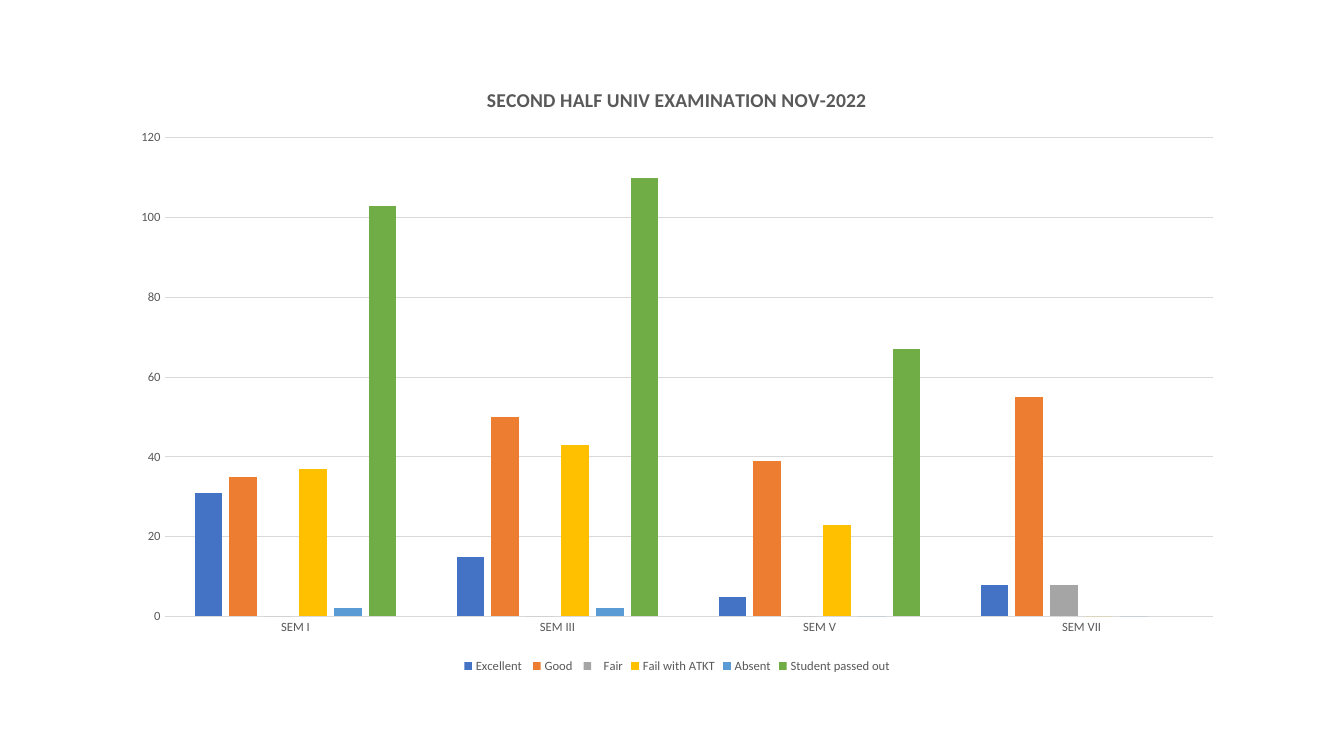
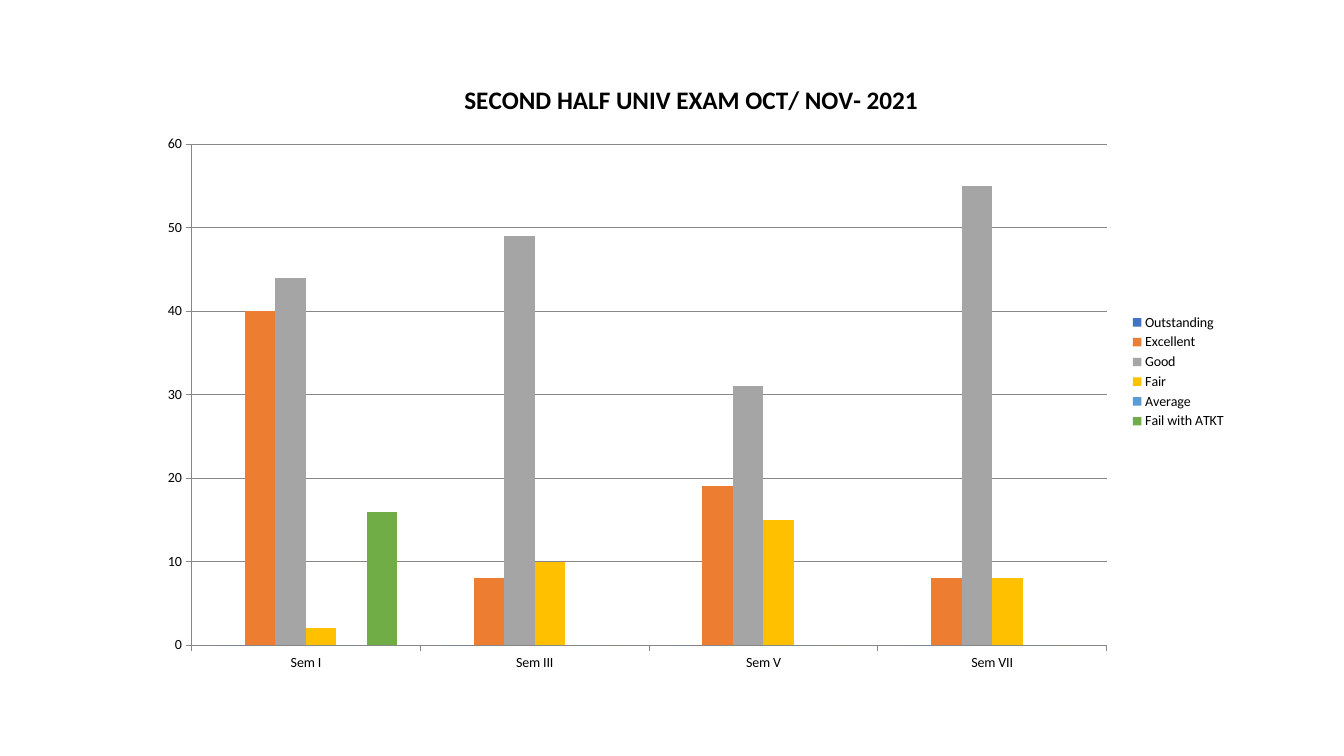
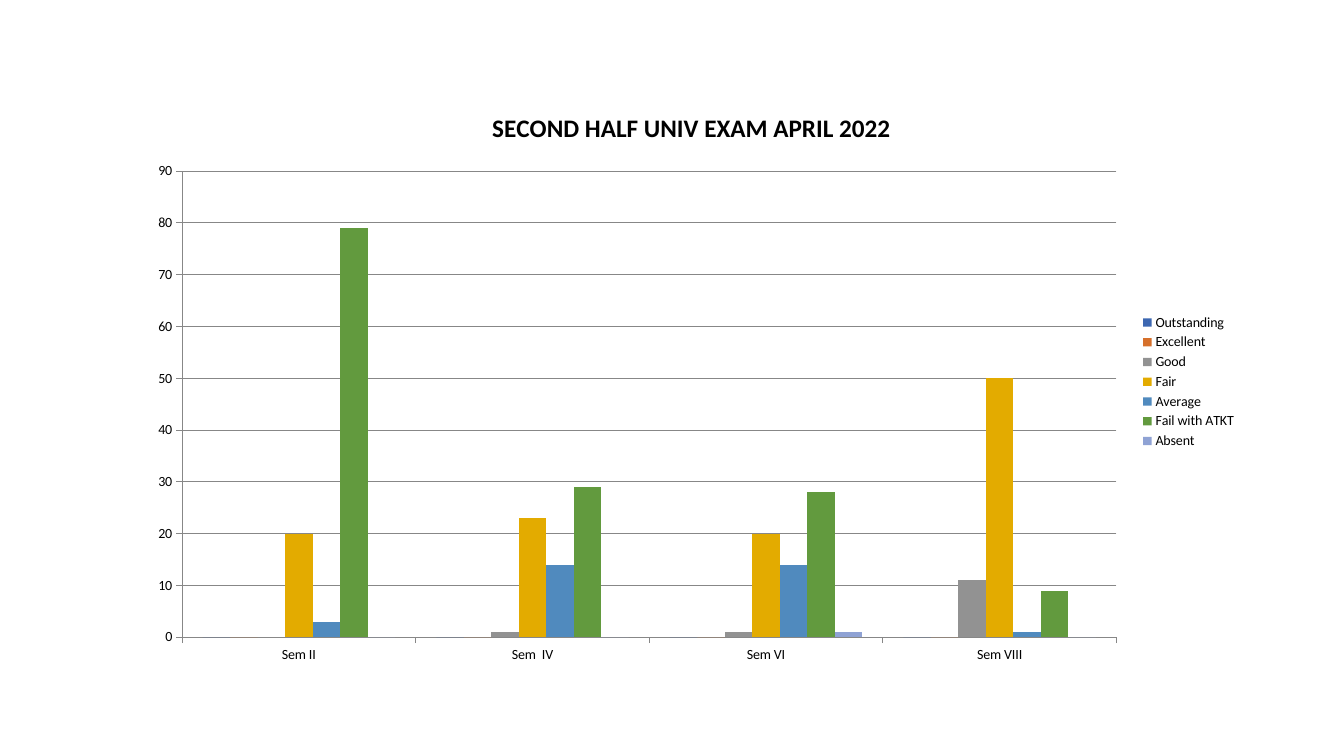
from dataclasses import dataclass
from typing import Optional

from pptx import Presentation
from pptx.chart.axis import CategoryAxis, ValueAxis
from pptx.chart.chart import Chart
from pptx.chart.data import CategoryChartData
from pptx.dml.color import RGBColor
from pptx.enum.chart import XL_CHART_TYPE, XL_LEGEND_POSITION, XL_TICK_MARK
from pptx.util import Cm, Pt

COLUMN = XL_CHART_TYPE.COLUMN_CLUSTERED
BOTTOM = XL_LEGEND_POSITION.BOTTOM
RIGHT = XL_LEGEND_POSITION.RIGHT
NO_TICK = XL_TICK_MARK.NONE
OUT_TICK = XL_TICK_MARK.OUTSIDE

FONT = "Calibri"
COLORS = {
    "blue": "4472C4",
    "orange": "ED7D31",
    "gray": "A5A5A5",
    "gold": "FFC000",
    "sky": "5B9BD5",
    "green": "70AD47",
    "deep blue": "3D67B1",
    "deep orange": "D6702B",
    "deep gray": "929292",
    "deep gold": "E3AB00",
    "deep sky": "508ABE",
    "deep green": "629A3E",
    "pale blue": "8FA2D4",
    "black": "000000",
    "slate": "595959",
    "silver": "D9D9D9",
    "steel": "878787",
}
BRIGHT = ("blue", "orange", "gray", "gold", "sky", "green")
DEEP = tuple(f"deep {name}" for name in BRIGHT) + ("pale blue",)


@dataclass(frozen=True)
class Look:
    ink: str
    grid: str
    title: int
    text: int
    tick: XL_TICK_MARK
    legend: XL_LEGEND_POSITION
    gap: int
    overlap: int
    spine: bool


@dataclass(frozen=True)
class Series:
    name: str
    values: tuple[Optional[int], ...]


@dataclass(frozen=True)
class Exam:
    title: str
    box: tuple[float, float, float, float]
    look: Look
    hues: tuple[str, ...]
    top: int
    step: int
    terms: tuple[str, ...]
    series: tuple[Series, ...]


SOFT = Look("slate", "silver", 14, 9, NO_TICK, BOTTOM, 219, -27, False)
PLAIN = Look("black", "steel", 18, 10, OUT_TICK, RIGHT, 150, 0, True)

EXAMS = (
    Exam(
        "SECOND HALF UNIV EXAMINATION NOV-2022",
        (3, 1.63, 28.12, 15.44),
        SOFT, BRIGHT, 120, 20,
        ("SEM I", "SEM III", "SEM V", "SEM VII"),
        (
            Series("Excellent ", (31, 15, 5, 8)),
            Series("Good ", (35, 50, 39, 55)),
            Series("   Fair", (0, 0, 0, 8)),
            Series("Fail with ATKT", (37, 43, 23, 0)),
            Series("Absent", (2, 2, 0, 0)),
            Series("Student passed out", (103, 110, 67, None)),
        ),
    ),
    Exam(
        "SECOND HALF UNIV EXAM OCT/ NOV- 2021",
        (3.68, 1.52, 27.48, 15.7),
        PLAIN, BRIGHT, 60, 10,
        ("Sem I", "Sem III", "Sem V", "Sem VII"),
        (
            Series("Outstanding", (0, 0, 0, 0)),
            Series("Excellent", (40, 8, 19, 8)),
            Series("Good", (44, 49, 31, 55)),
            Series("Fair", (2, 10, 15, 8)),
            Series("Average", (0, 0, 0, 0)),
            Series("Fail with ATKT", (16, 0, 0, 0)),
        ),
    ),
    Exam(
        "SECOND HALF UNIV EXAM APRIL 2022",
        (3.43, 2.24, 27.99, 14.76),
        PLAIN, DEEP, 90, 10,
        ("Sem II", "Sem  IV", "Sem VI", "Sem VIII"),
        (
            Series("Outstanding", (0, 0, 0, 0)),
            Series("Excellent", (0, 0, 0, 0)),
            Series("Good ", (0, 1, 1, 11)),
            Series("Fair", (20, 23, 20, 50)),
            Series("Average", (3, 14, 14, 1)),
            Series("Fail with ATKT", (79, 29, 28, 9)),
            Series("Absent", (0, 0, 1, 0)),
        ),
    ),
)


def color(name: str) -> RGBColor:
    return RGBColor.from_string(COLORS[name])


def set_font(font, size: int, ink: str, bold: bool = False) -> None:
    font.name = FONT
    font.size = Pt(size)
    font.bold = bold
    font.color.rgb = color(ink)


def set_line(line, hue: str) -> None:
    line.color.rgb = color(hue)
    line.width = Pt(0.75)


def style_axis(axis: CategoryAxis | ValueAxis, look: Look) -> None:
    axis.major_tick_mark = look.tick
    axis.minor_tick_mark = NO_TICK
    set_font(axis.tick_labels.font, look.text, look.ink)
    set_line(axis.format.line, look.grid)


def style_chart(chart: Chart, exam: Exam) -> None:
    look = exam.look
    set_font(chart.font, look.text, look.ink)

    chart.has_title = True
    title = chart.chart_title
    title.include_in_layout = False
    title.text_frame.text = exam.title
    set_font(title.text_frame.paragraphs[0].font, look.title, look.ink, True)

    chart.has_legend = True
    chart.legend.position = look.legend
    chart.legend.include_in_layout = False
    set_font(chart.legend.font, look.text, look.ink)

    style_axis(chart.category_axis, look)
    scale = chart.value_axis
    style_axis(scale, look)
    if not look.spine:
        scale.format.line.fill.background()
    scale.minimum_scale = 0
    scale.maximum_scale = exam.top
    scale.major_unit = exam.step
    scale.has_major_gridlines = True
    set_line(scale.major_gridlines.format.line, look.grid)

    plot = chart.plots[0]
    plot.vary_by_categories = False
    plot.gap_width = look.gap
    plot.overlap = look.overlap
    for series, hue in zip(plot.series, exam.hues):
        series.invert_if_negative = False
        series.format.fill.solid()
        series.format.fill.fore_color.rgb = color(hue)


def add_exam(deck, exam: Exam) -> None:
    slide = deck.slides.add_slide(deck.slide_layouts[6])
    data = CategoryChartData()
    data.categories = exam.terms
    for series in exam.series:
        data.add_series(series.name, series.values)
    box = [Cm(length) for length in exam.box]
    style_chart(slide.shapes.add_chart(COLUMN, *box, data).chart, exam)


def main() -> None:
    deck = Presentation()
    deck.slide_width = Cm(33.87)
    deck.slide_height = Cm(19.05)
    for exam in EXAMS:
        add_exam(deck, exam)
    deck.save("out.pptx")


if __name__ == "__main__":
    main()
